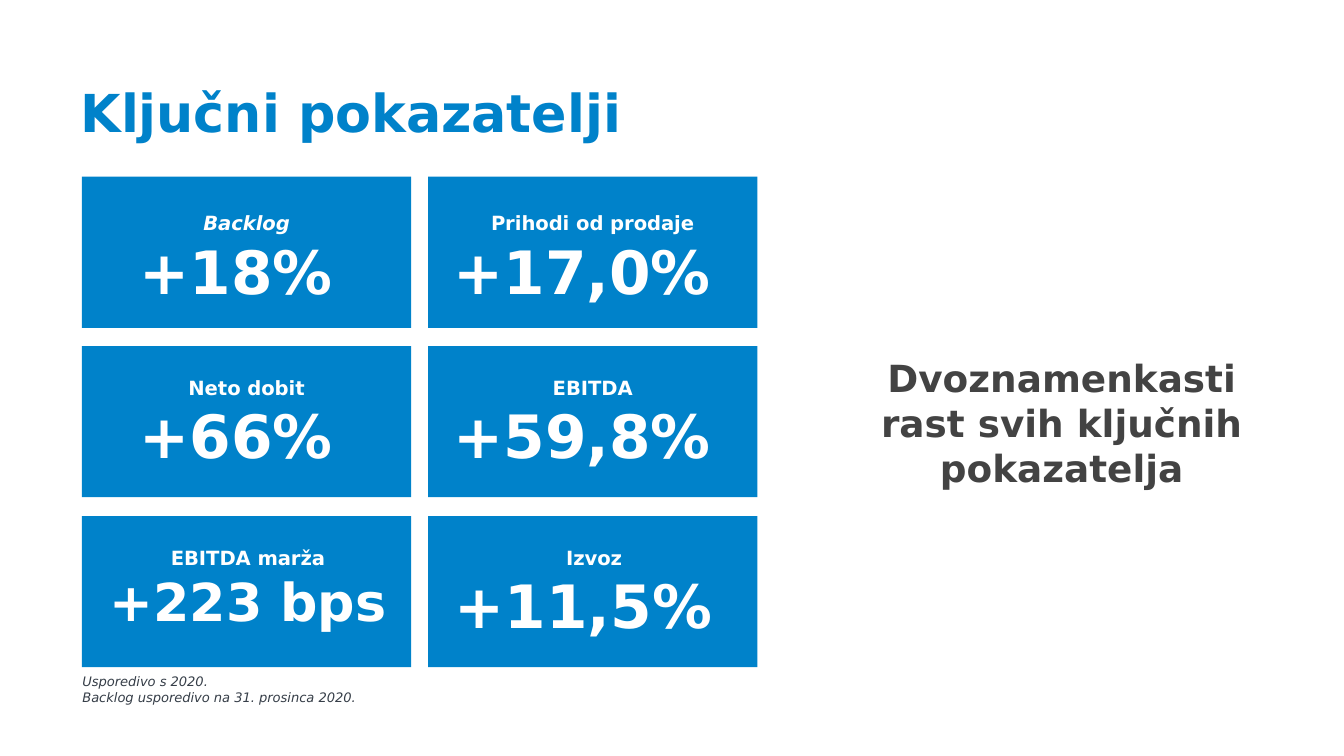
import pptx
import pptx.dml.color
import pptx.enum.shapes
import pptx.enum.text
import pptx.util

EMU_PER_PX = 4572  # 200 px to the inch
FONT = "DejaVu Sans"
BLUE, WHITE, GREY, SLATE = "0082CA", "FFFFFF", "434343", "363E48"
LEFT = pptx.enum.text.PP_ALIGN.LEFT
CENTER = pptx.enum.text.PP_ALIGN.CENTER
NO_FIT = pptx.enum.text.MSO_AUTO_SIZE.NONE
FIT_SHAPE = pptx.enum.text.MSO_AUTO_SIZE.SHAPE_TO_FIT_TEXT

CARD_WIDTH, CARD_HEIGHT = 490, 225
COLUMN_LEFTS = (122, 637)
# top of card, top of its text, shift of the text to the right
ROWS = ((263, 304, 0), (515, 549, 0), (768, 802, 2))
INDICATORS = (
    (("Backlog", "+18% "), ("Prihodi od prodaje", "+17,0% ")),
    (("Neto dobit", "+66% "), ("EBITDA", "+59,8% ")),
    (("EBITDA marža", "+223 bps"), ("Izvoz", "+11,5% ")),
)


def px(length):
    return pptx.util.Emu(length * EMU_PER_PX)


def color(value):
    return pptx.dml.color.RGBColor.from_string(value)


def add_run(paragraph, text, size, fill, bold=False, italic=False):
    run = paragraph.add_run()
    run.text = text
    font = run.font
    font.name, font.size = FONT, pptx.util.Pt(size)
    font.bold, font.italic = bold, italic
    font.color.rgb = color(fill)


def write_lines(frame, lines, alignment):
    """Fill a text frame; each line is the arguments of one run."""
    for index, line in enumerate(lines):
        paragraph = frame.add_paragraph() if index else frame.paragraphs[0]
        paragraph.alignment = alignment
        add_run(paragraph, *line)


def add_title(slide, text):
    title = slide.shapes.title
    title.left, title.top, title.width, title.height = map(px, (100, 100, 1146, 242))
    frame = title.text_frame
    frame.auto_size = NO_FIT
    frame.vertical_anchor = pptx.enum.text.MSO_ANCHOR.TOP
    frame.margin_left = frame.margin_right = px(20)
    frame.margin_top = frame.margin_bottom = px(20)
    write_lines(frame, [(text, 28, BLUE, True)], LEFT)


def add_text(slide, box, lines, alignment=CENTER, wrap=True):
    frame = slide.shapes.add_textbox(*map(px, box)).text_frame
    frame.word_wrap = wrap
    frame.auto_size = FIT_SHAPE
    write_lines(frame, lines, alignment)


def add_card(slide, left, top):
    card = slide.shapes.add_shape(
        pptx.enum.shapes.MSO_SHAPE.RECTANGLE,
        *map(px, (left, top, CARD_WIDTH, CARD_HEIGHT)))
    card.shadow.inherit = False
    card.fill.solid()
    card.fill.fore_color.rgb = color(BLUE)
    card.line.fill.background()


def add_indicator(slide, left, top, label, value):
    value_size = 28 if "bps" in value else 32
    height = 150 if "bps" in value else 164
    lines = [(label, 10.5, WHITE, True, label == "Backlog"),
             (value, value_size, WHITE, True)]
    add_text(slide, (left, top, CARD_WIDTH, height), lines, wrap=False)


def main():
    presentation = pptx.Presentation()
    presentation.slide_width, presentation.slide_height = px(2000), px(1125)
    slide = presentation.slides.add_slide(presentation.slide_layouts[5])

    add_title(slide, "Ključni pokazatelji")
    add_text(slide, (1262, 519, 636, 222),
             [("Dvoznamenkasti rast svih ključnih pokazatelja", 20, GREY, True)])
    notes = ("Usporedivo s 2020.", "Backlog usporedivo na 31. prosinca 2020.")
    add_text(slide, (103, 993, 488, 68),
             [(note, 7, SLATE, False, True) for note in notes], LEFT)
    for (top, text_top, shift), indicators in zip(ROWS, INDICATORS):
        for left, (label, value) in zip(COLUMN_LEFTS, indicators):
            add_card(slide, left, top)
            add_indicator(slide, left + shift, text_top, label, value)

    presentation.save("out.pptx")


if __name__ == "__main__":
    main()
